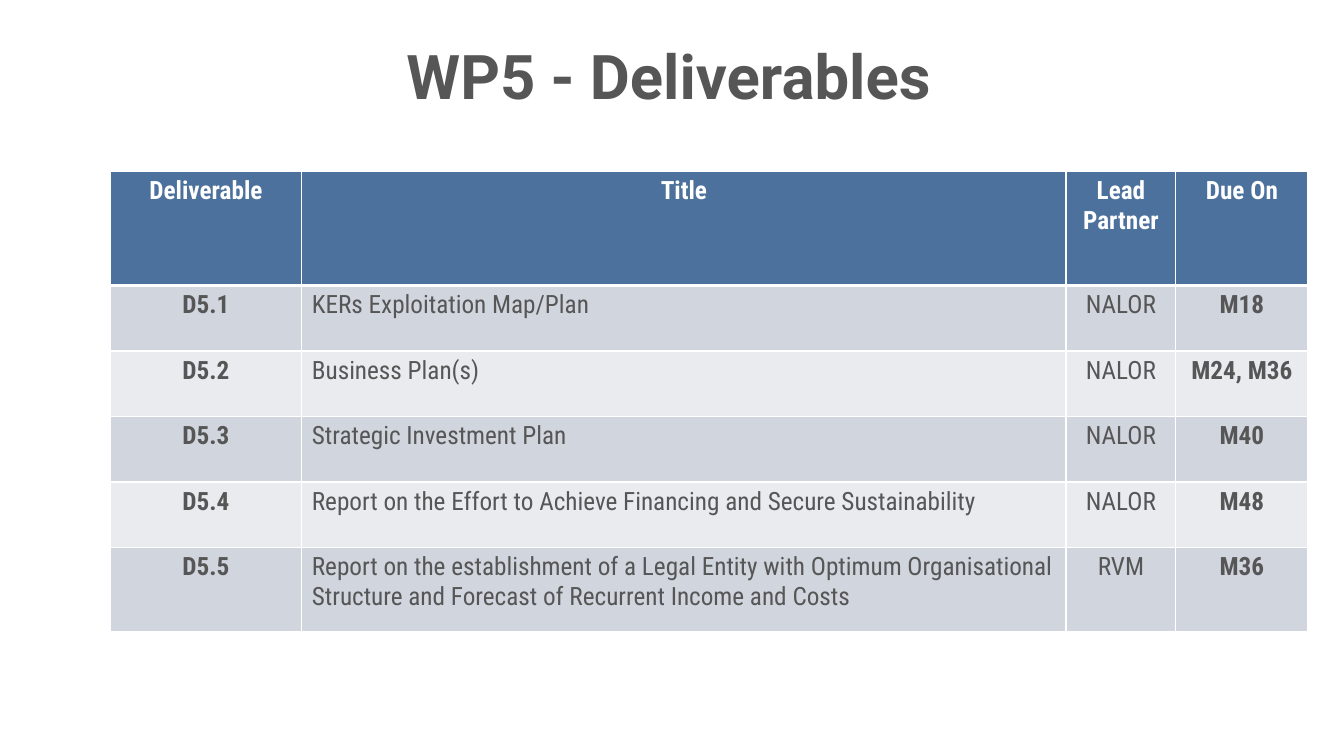
from lxml.etree import SubElement as Sub
from pptx import Presentation as Deck
from pptx.dml.color import RGBColor as RGB
from pptx.enum.text import MSO_ANCHOR as Anchor, PP_ALIGN as Align
from pptx.oxml.ns import qn
from pptx.util import Inches, Pt

WIDE, HIGH = Inches(13.33), Inches(7.5)
WHITE = RGB(0xFF, 0xFF, 0xFF)
GREY = RGB(0x56, 0x56, 0x56)
BLUE = RGB(0x4B, 0x71, 0x9C)
DARK = RGB(0xD0, 0xD5, 0xDE)
PALE = RGB(0xE9, 0xEB, 0xEF)

COLS = [1.9, 7.58, 1.09, 1.31]
ROWS = [1.13] + [0.65] * 4 + [0.83]
HEAD = ["Deliverable", "Title", "Lead Partner", "Due On"]
ITEMS = [
    ["D5.1", "KERs Exploitation Map/Plan", "NALOR", "M18"],
    ["D5.2", "Business Plan(s)", "NALOR", "M24, M36"],
    ["D5.3", "Strategic Investment Plan", "NALOR", "M40"],
    ["D5.4", "Report on the Effort to Achieve Financing and Secure Sustainability",
     "NALOR", "M48"],
    ["D5.5", "Report on the establishment of a Legal Entity with Optimum "
     "Organisational Structure and Forecast of Recurrent Income and Costs",
     "RVM", "M36"],
]


def add_run(para, text, face, size, color, bold):
    run = para.add_run()
    run.text = text
    font = run.font
    font.name, font.size, font.bold = face, Pt(size), bold
    font.color.rgb = color


def add_edge(cell, side, width):
    line = Sub(cell._tc.get_or_add_tcPr(), qn(f"a:ln{side}"), w=str(Pt(width)))
    fill = Sub(line, qn("a:solidFill"))
    Sub(fill, qn("a:srgbClr"), val=str(WHITE))


def add_title(slide, text):
    box = slide.shapes.add_textbox(
        int(WIDE * 0.295), int(HIGH * 0.037), int(WIDE * 0.41), int(HIGH * 0.119))
    frame = box.text_frame
    frame.word_wrap = True
    frame.vertical_anchor = Anchor.BOTTOM
    para = frame.paragraphs[0]
    para.line_spacing = 0.9
    add_run(para, text, "Roboto", 44, GREY, True)


def fill_cell(cell, text, row, col):
    head = row == 0
    for side in "LRTB":
        thick = (head and side == "B") or (row == 1 and side == "T")
        add_edge(cell, side, 3 if thick else 1)
    cell.fill.solid()
    cell.fill.fore_color.rgb = BLUE if head else DARK if row % 2 else PALE
    para = cell.text_frame.paragraphs[0]
    para.alignment = Align.LEFT if col == 1 and not head else Align.CENTER
    add_run(para, text, "Roboto Condensed", 18, WHITE if head else GREY,
            head or col in (0, 3))


def add_grid(slide, data):
    shape = slide.shapes.add_table(
        len(ROWS), len(COLS), int(WIDE * 0.082), int(HIGH * 0.227),
        Inches(sum(COLS)), Inches(sum(ROWS)))
    table = shape.table
    for col, width in zip(table.columns, COLS):
        col.width = Inches(width)
    for row, height in zip(table.rows, ROWS):
        row.height = Inches(height)
    for row, line in enumerate(data):
        for col, text in enumerate(line):
            fill_cell(table.cell(row, col), text, row, col)


def main():
    deck = Deck()
    deck.slide_width, deck.slide_height = WIDE, HIGH
    slide = deck.slides.add_slide(deck.slide_layouts[6])
    add_title(slide, "WP5 - Deliverables")
    add_grid(slide, [HEAD] + ITEMS)
    deck.save("out.pptx")


if __name__ == "__main__":
    main()
